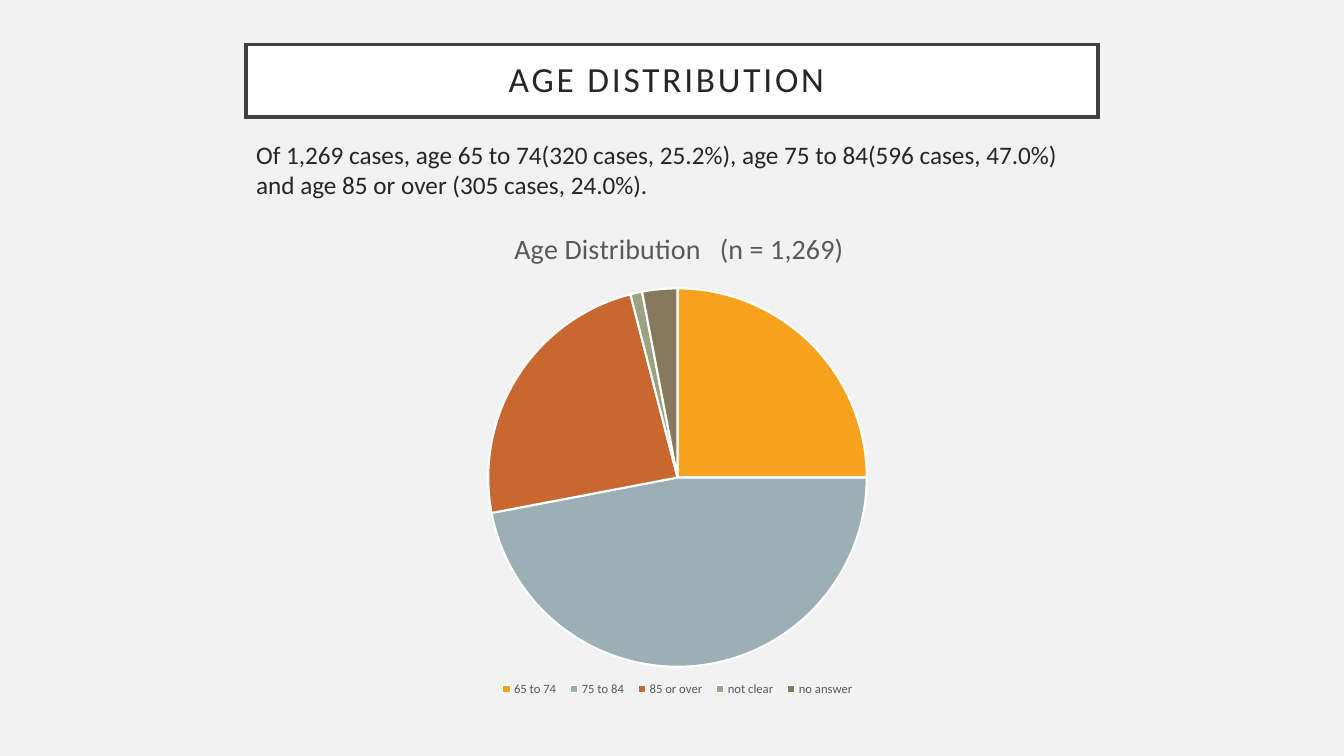
from pptx import Presentation
from pptx.chart.data import CategoryChartData
from pptx.dml.color import RGBColor
from pptx.enum.chart import XL_CHART_TYPE, XL_LEGEND_POSITION
from pptx.enum.text import MSO_ANCHOR, MSO_AUTO_SIZE, PP_ALIGN
from pptx.oxml import parse_xml
from pptx.oxml.ns import nsdecls, qn
from pptx.util import Inches, Pt


def color(value):
    return RGBColor.from_string(value)


def place(element, index, target="", **fractions):
    """Give a chart part a manual layout in fractions of the chart."""
    for old in element.findall(qn("c:layout")):
        element.remove(old)
    modes = '<c:xMode val="edge"/><c:yMode val="edge"/>'
    sizes = "".join(f'<c:{key} val="{value}"/>' for key, value in fractions.items())
    element.insert(index, parse_xml(
        f'<c:layout {nsdecls("c")}><c:manualLayout>{target}{modes}{sizes}'
        "</c:manualLayout></c:layout>"))


deck = Presentation()
deck.slide_width, deck.slide_height = Inches(13.33), Inches(7.5)
page = deck.slides.add_slide(deck.slide_layouts[1])
page.background.fill.solid()
page.background.fill.fore_color.rgb = color("F2F2F2")

# Title and body text
title, body = page.shapes.title, page.placeholders[1]
texts = [
    (title, 0.44, 0.72, 25.2, "AGE DISTRIBUTION "),
    (body, 1.33, 5.93, 18,
     "Of 1,269 cases, age 65 to 74(320 cases, 25.2%), age 75 to 84(596 cases, 47.0%) "
     "and age 85 or over (305 cases, 24.0%)."),
]
for box, top, height, size, text in texts:
    box.left, box.top = Inches(2.44), Inches(top)
    box.width, box.height = Inches(8.45), Inches(height)
    box.text_frame.word_wrap = True
    box.text_frame.auto_size = MSO_AUTO_SIZE.NONE
    span = box.text_frame.paragraphs[0].add_run()
    span.text = text
    for name, value in {"name": "Calibri", "size": Pt(size)}.items():
        setattr(span.font, name, value)
    span.font.color.rgb = color("262626")

# Title frame with square corners, centred and letter-spaced
title.fill.solid()
title.fill.fore_color.rgb = color("FFFFFF")
title.line.color.rgb = color("404040")
title.line.width = Pt(2.5)
title.line._get_or_add_ln().append(parse_xml(f'<a:miter {nsdecls("a")} lim="800000"/>'))
title.text_frame.vertical_anchor = MSO_ANCHOR.MIDDLE
for side in ("left", "top", "right", "bottom"):
    setattr(title.text_frame, f"margin_{side}", Inches(0.2))
para = title.text_frame.paragraphs[0]
para.alignment, para.line_spacing = PP_ALIGN.CENTER, 0.9
para.runs[0].font._element.set("spc", "200")

# Body paragraph without a bullet
body.text_frame.vertical_anchor = MSO_ANCHOR.TOP
para = body.text_frame.paragraphs[0]
para.space_before = Pt(10)
properties = para._p.get_or_add_pPr()
properties.set("marL", "0")
properties.set("indent", "0")
properties.append(parse_xml(f'<a:buNone {nsdecls("a")}/>'))

# Pie chart of age groups, in percent
ages = [
    ("65 to 74", 25, "F6A21D"),
    ("75 to 84", 47, "9BAFB5"),
    ("85 or over", 24, "C96731"),
    ("not clear", 1, "9CA383"),
    ("no answer", 3, "87795D"),
]
data = CategoryChartData()
data.categories = [label for label, share, fill in ages]
data.add_series("Series 1", [share for label, share, fill in ages])
chart = page.shapes.add_chart(
    XL_CHART_TYPE.PIE, Inches(2.55), Inches(2.12), Inches(8.34), Inches(4.94), data).chart
chart.font.name, chart.font.size = "Calibri", Pt(10)
plot = chart.plots[0]
plot.vary_by_categories = True
for index, (label, share, fill) in enumerate(ages):
    wedge = plot.series[0].points[index].format
    wedge.fill.solid()
    wedge.fill.fore_color.rgb = color(fill)
    wedge.line.color.rgb = color("FFFFFF")
    wedge.line.width = Pt(1.5)

# Chart title and legend
chart.has_title = True
chart.chart_title.include_in_layout = False
span = chart.chart_title.text_frame.paragraphs[0].add_run()
span.text = "Age Distribution   (n = 1,269)"
chart.has_legend = True
chart.legend.position = XL_LEGEND_POSITION.BOTTOM
chart.legend.include_in_layout = False
for font, size in ((span.font, 20), (chart.legend.font, 9)):
    for name, value in {"name": "Calibri", "size": Pt(size), "bold": False}.items():
        setattr(font, name, value)
    font.color.rgb = color("595959")

# Positions inside the chart
place(chart.chart_title._element, 1, x=0.3, y=0.02)
place(chart.legend._element, 1, x=0.28, y=0.93, w=0.44, h=0.05)
place(chart._chartSpace.chart.plotArea, 0, '<c:layoutTarget val="inner"/>',
      x=0.27, y=0.15, w=0.46, h=0.76)

deck.save("out.pptx")
